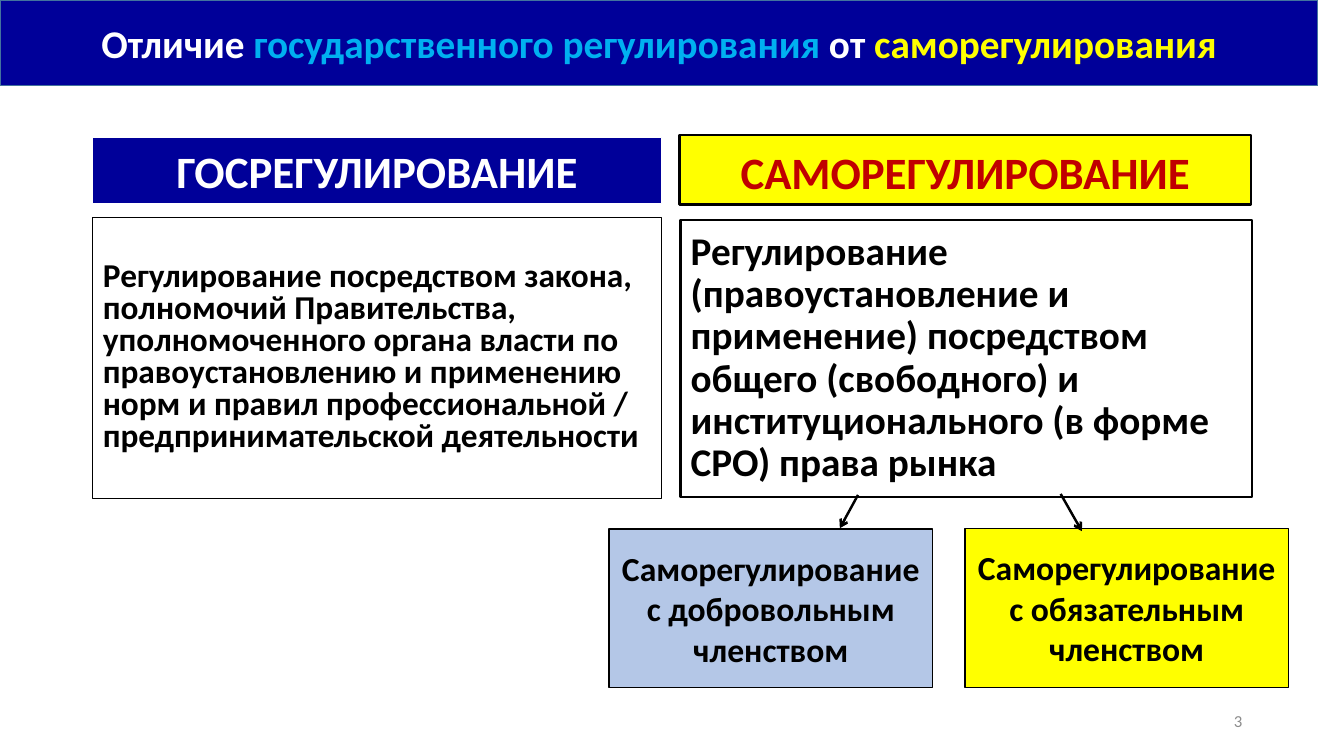
from lxml import etree
from pptx import Presentation
from pptx import util as u
from pptx.dml.color import RGBColor
from pptx.enum import shapes, text
from pptx.oxml import ns

FONT = "Calibri"
COLOURS = {
    "navy": "000099", "yellow": "FFFF00", "red": "C00000", "sky": "00B0F0",
    "pale_blue": "B4C7E7", "banner_edge": "43739E", "grey": "8C8C8C",
    "black": "000000", "white": "FFFFFF",
}
LEFT, CENTRE, RIGHT = text.PP_ALIGN.LEFT, text.PP_ALIGN.CENTER, text.PP_ALIGN.RIGHT
MIDDLE, BOTTOM = text.MSO_ANCHOR.MIDDLE, text.MSO_ANCHOR.BOTTOM


def colour(name):
    return RGBColor.from_string(COLOURS[name])


def place(shape, box):
    shape.left, shape.top, shape.width, shape.height = map(u.Inches, box)


def paint(shape, fill, line, width):
    if fill:
        shape.fill.solid()
        shape.fill.fore_color.rgb = colour(fill)
    else:
        shape.fill.background()
    shape.line.color.rgb = colour(line)
    shape.line.width = u.Pt(width)


def write(shape, runs, size, align=CENTRE, anchor=MIDDLE, bold=True):
    """Fill one paragraph with (words, colour) runs."""
    frame = shape.text_frame
    frame.word_wrap = True
    frame.auto_size = text.MSO_AUTO_SIZE.NONE
    frame.vertical_anchor = anchor
    paragraph = frame.paragraphs[0]
    paragraph.alignment = align
    for words, name in runs:
        run = paragraph.add_run()
        run.text = words
        run.font.name = FONT
        run.font.size = u.Pt(size)
        run.font.bold = bold
        run.font.color.rgb = colour(name)
    return paragraph


def add_banner(slide, box):
    title = slide.shapes.title
    place(title, box)
    # Snipped corner outline
    geometry = etree.SubElement(title.element.spPr, ns.qn("a:prstGeom"), prst="snip1Rect")
    etree.SubElement(geometry, ns.qn("a:avLst"))
    paint(title, "navy", "banner_edge", 1)
    write(title, [("Отличие ", "white"), ("государственного регулирования", "sky"),
                  (" от ", "white"), ("саморегулирования", "yellow")], 28)


def add_panel(placeholder, box, words, size, ink, fill, line, width,
              align=LEFT, anchor=MIDDLE, spacing=0.9):
    place(placeholder, box)
    paint(placeholder, fill, line, width)
    paragraph = write(placeholder, [(words, ink)], size, align, anchor)
    paragraph.line_spacing = spacing
    paragraph.space_before = u.Pt(10)
    # No bullet, no hanging indent
    properties = paragraph._p.get_or_add_pPr()
    properties.set("marL", "0")
    properties.set("indent", "0")
    etree.SubElement(properties, ns.qn("a:buNone"))


def add_comparison(slide):
    parts = {part.placeholder_format.idx: part for part in slide.placeholders}
    # State regulation
    add_panel(parts[1], (0.92, 1.36, 5.64, 0.66), "ГОСРЕГУЛИРОВАНИЕ", 32,
              "white", "navy", "white", 0.75, CENTRE, BOTTOM)
    add_panel(parts[2], (0.92, 2.16, 5.64, 2.79),
              "Регулирование посредством закона, полномочий Правительства, "
              "уполномоченного органа власти по правоустановлению и применению "
              "норм и правил профессиональной / предпринимательской деятельности",
              23.8, "black", None, "black", 0.75, spacing=0.8)
    # Self-regulation
    add_panel(parts[3], (6.74, 1.34, 5.67, 0.69), "САМОРЕГУЛИРОВАНИЕ", 32,
              "red", "yellow", "black", 1.75, CENTRE, BOTTOM)
    add_panel(parts[4], (6.75, 2.18, 5.67, 2.75),
              "Регулирование (правоустановление и применение) посредством общего "
              "(свободного) и институционального (в форме СРО) права рынка",
              28, "black", None, "black", 1.75)


def add_membership(slide, box, words, fill):
    shape = slide.shapes.add_shape(shapes.MSO_SHAPE.RECTANGLE, *map(u.Inches, box))
    shape.shadow.inherit = False
    paint(shape, fill, "black", 1)
    write(shape, [(words, "black")], 24)


def add_arrow(slide, *ends):
    arrow = slide.shapes.add_connector(shapes.MSO_CONNECTOR.STRAIGHT, *map(u.Inches, ends))
    arrow.line.color.rgb = colour("black")
    arrow.line.width = u.Pt(1.75)
    etree.SubElement(arrow.line._get_or_add_ln(), ns.qn("a:tailEnd"), type="arrow")
    etree.SubElement(arrow._element.spPr, ns.qn("a:effectLst"))


def add_page_number(slide, box):
    number = slide.shapes.add_textbox(*map(u.Inches, box))
    write(number, [("3", "grey")], 12, RIGHT, bold=False)


def main():
    presentation = Presentation()
    presentation.slide_width, presentation.slide_height = u.Inches(13.33), u.Inches(7.5)
    slide = presentation.slides.add_slide(presentation.slide_layouts.get_by_name("Comparison"))

    add_banner(slide, (0, 0, 13.07, 0.85))
    add_comparison(slide)

    # Two kinds of self-regulation
    add_membership(slide, (6.04, 5.25, 3.21, 1.57),
                   "Саморегулирование с добровольным членством", "pale_blue")
    add_membership(slide, (9.57, 5.24, 3.21, 1.58),
                   "Саморегулирование с обязательным членством", "yellow")
    add_arrow(slide, 8.51, 4.91, 8.33, 5.24)
    add_arrow(slide, 10.52, 4.9, 10.73, 5.27)

    add_page_number(slide, (9.42, 6.95, 3, 0.4))
    presentation.save("out.pptx")


if __name__ == "__main__":
    main()
